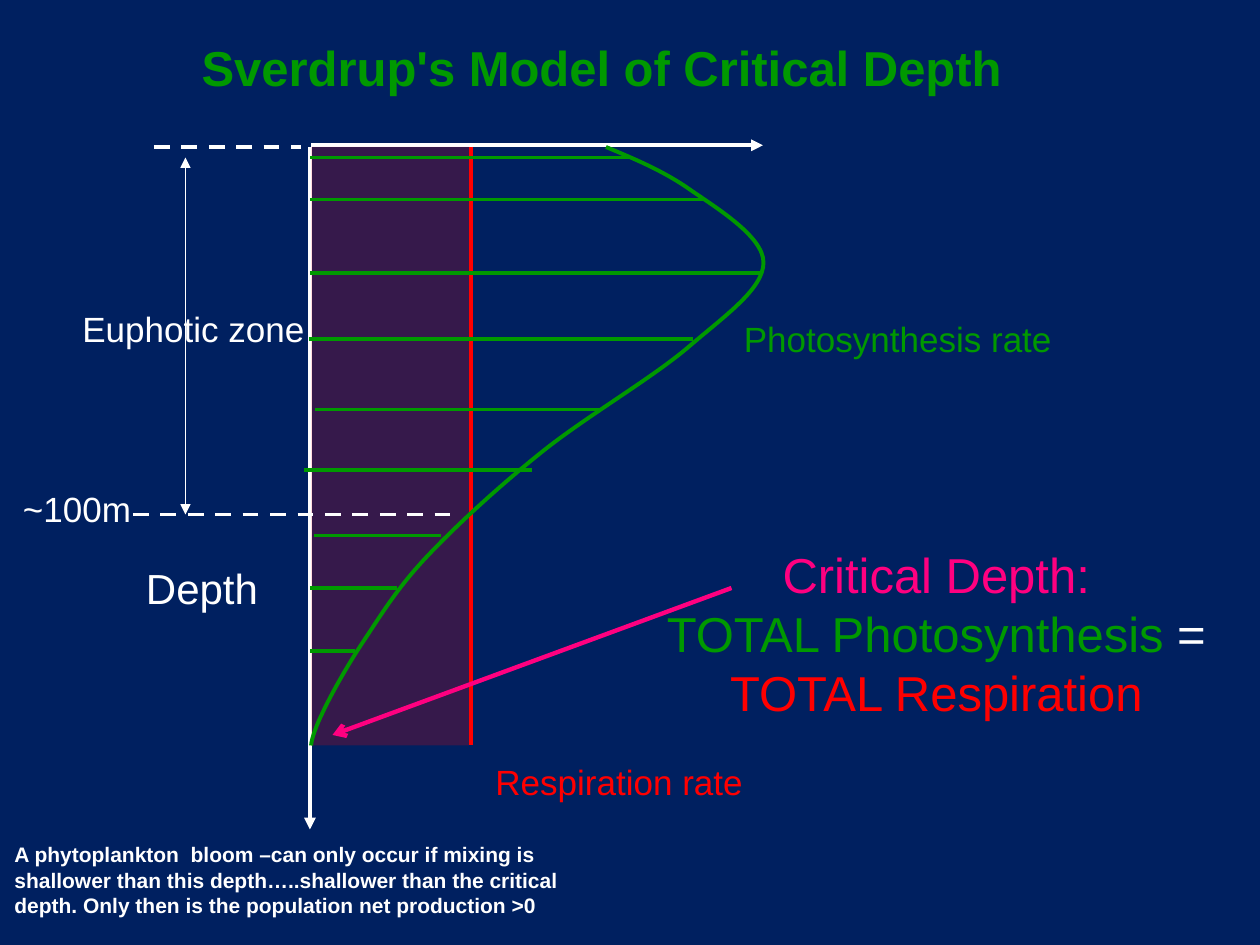
from lxml import etree
from pptx import Presentation
from pptx import util as u
from pptx.dml.color import RGBColor
from pptx.enum import dml, shapes, text
from pptx.oxml import ns

NAVY = RGBColor(0x00, 0x20, 0x60)
WHITE = RGBColor(0xFF, 0xFF, 0xFF)
GREEN = RGBColor(0x00, 0x99, 0x00)
RED = RGBColor(0xFF, 0x00, 0x00)
PINK = RGBColor(0xFF, 0x00, 0x80)

# Positions in points
AXIS_X = 177.1
RESPIRATION_X = 269.3
SURFACE_Y = 84
EUPHOTIC_Y = 294
CRITICAL_Y = 426

# Start point, then two control points and an end point for each segment
PHOTOSYNTHESIS_CURVE = [
    (346.3, 84),
    (362, 90.6), (378.6, 97.4), (393.8, 108),
    (409, 118.6), (436.3, 135), (436.3, 150),
    (436.3, 165), (414.8, 180), (393.8, 198),
    (372.8, 216), (335, 238), (310, 258),
    (285, 278), (261, 300), (244, 318),
    (227, 336), (218, 351), (208, 366),
    (198, 381), (188.6, 398), (184, 408),
    (179.2, 418), (177.8, 424), (177.8, 426),
]

# Depth, left end and right end of each hatch line
HATCHING = [
    (90, AXIS_X, 360), (114, AXIS_X, 402), (156, AXIS_X, 436),
    (193.7, 176.4, 396), (234, 180, 344), (268.6, 173.5, 304),
    (306, 179.3, 252), (336, AXIS_X, 226.8), (372, AXIS_X, 203),
]


def add_line(slide, start, end, color, width=2.25, dashed=False, head=None, tail=None):
    """Draw a line; head and tail are arrowheads at start and end."""
    line = slide.shapes.add_connector(
        shapes.MSO_CONNECTOR.STRAIGHT, *(u.Pt(value) for value in (*start, *end)))
    line.line.color.rgb = color
    line.line.width = u.Pt(width)
    if dashed:
        line.line.dash_style = dml.MSO_LINE.DASH
    outline = line.line._get_or_add_ln()
    for tag, kind in (("a:headEnd", head), ("a:tailEnd", tail)):
        if kind:
            etree.SubElement(outline, ns.qn(tag), type=kind)
    etree.SubElement(line._element.spPr, ns.qn("a:effectLst"))


def fill_text(shape, box, paragraphs, size, bold=False, align=None, wrap=False):
    """Place a text shape; each paragraph is a list of (text, color) runs."""
    shape.left, shape.top, shape.width, shape.height = (u.Pt(value) for value in box)
    frame = shape.text_frame
    frame.word_wrap = wrap
    frame.auto_size = text.MSO_AUTO_SIZE.NONE
    frame.vertical_anchor = text.MSO_ANCHOR.TOP
    for index, runs in enumerate(paragraphs):
        paragraph = frame.add_paragraph() if index else frame.paragraphs[0]
        paragraph.alignment = align
        for words, color in runs:
            run = paragraph.add_run()
            run.text = words
            run.font.name = "Arial"
            run.font.size = u.Pt(size)
            run.font.bold = bold
            run.font.color.rgb = color


def add_label(slide, box, paragraphs, size, **options):
    fill_text(slide.shapes.add_textbox(0, 0, 0, 0), box, paragraphs, size, **options)


def add_respiration_area(slide):
    area = slide.shapes.add_shape(
        shapes.MSO_SHAPE.RECTANGLE, u.Pt(178), u.Pt(SURFACE_Y),
        u.Pt(90), u.Pt(CRITICAL_Y - SURFACE_Y))
    area.shadow.inherit = False
    area.line.fill.background()
    area.fill.solid()
    area.fill.fore_color.rgb = RED
    color = area._element.spPr.find(".//" + ns.qn("a:srgbClr"))
    etree.SubElement(color, ns.qn("a:alpha"), val="21000")


def add_curve(slide, points, color):
    """Draw an open outline and turn its points into cubic Bezier segments."""
    points = [(u.Pt(x), u.Pt(y)) for x, y in points]
    builder = slide.shapes.build_freeform(*points[0])
    builder.add_line_segments(points[1:], close=False)
    curve = builder.convert_to_shape()
    outline = curve._element.find(".//" + ns.qn("a:path"))
    vertices = outline.findall(ns.qn("a:lnTo"))
    for index in range(0, len(vertices), 3):
        segment = etree.SubElement(outline, ns.qn("a:cubicBezTo"))
        for vertex in vertices[index:index + 3]:
            segment.append(vertex[0])
            outline.remove(vertex)
    curve.shadow.inherit = False
    curve.fill.background()
    curve.line.color.rgb = color
    curve.line.width = u.Pt(2.25)


def main():
    presentation = Presentation()
    presentation.slide_width = u.Pt(720)
    presentation.slide_height = u.Pt(540)
    slide = presentation.slides.add_slide(presentation.slide_layouts[5])
    slide.background.fill.solid()
    slide.background.fill.fore_color.rgb = NAVY

    fill_text(slide.shapes.title, (108, 18, 473, 41),
              [[("Sverdrup's Model of Critical Depth", GREEN)]], 28,
              bold=True, align=text.PP_ALIGN.LEFT)

    add_line(slide, (178, 83), (436, 83), WHITE, tail="triangle")
    add_line(slide, (AXIS_X, SURFACE_Y), (AXIS_X, 474), WHITE, tail="triangle")
    add_label(slide, (76.3, 318, 78.5, 36), [[("Depth", WHITE)]], 24)

    add_respiration_area(slide)
    add_line(slide, (RESPIRATION_X, SURFACE_Y), (RESPIRATION_X, CRITICAL_Y), RED)
    add_label(slide, (276, 431.3, 155.5, 31), [[("Respiration rate", RED)]], 20)
    add_label(slide, (418, 178, 191.5, 31.5), [[("Photosynthesis rate", GREEN)]], 20)

    add_line(slide, (76, EUPHOTIC_Y), (262, EUPHOTIC_Y), WHITE, dashed=True)
    add_line(slide, (106, 90), (106, EUPHOTIC_Y), WHITE, 0.75,
             head="triangle", tail="triangle")
    add_label(slide, (40, 172, 141, 31), [[("Euphotic zone", WHITE)]], 20)
    add_label(slide, (6, 275, 76, 31), [[("~100m", WHITE)]], 20)
    add_line(slide, (88, SURFACE_Y), (172, SURFACE_Y), WHITE, dashed=True)

    add_curve(slide, PHOTOSYNTHESIS_CURVE, GREEN)
    for depth, left, right in HATCHING:
        add_line(slide, (right, depth), (left, depth), GREEN, 2)

    add_label(slide, (1.2, 477.5, 360, 51), [[(
        "A phytoplankton  bloom –can only occur if mixing is shallower than this "
        "depth…..shallower than the critical depth. Only then is the population "
        "net production >0", WHITE)]], 12, bold=True, wrap=True)
    add_label(slide, (372, 307.5, 326, 109), [
        [("Critical Depth:", PINK)],
        [("TOTAL Photosynthesis", GREEN), (" =", WHITE)],
        [("TOTAL Respiration", RED)],
    ], 28, align=text.PP_ALIGN.CENTER)
    add_line(slide, (418, 336), (190, 420), PINK, 2.5, tail="arrow")

    presentation.save("out.pptx")


if __name__ == "__main__":
    main()
